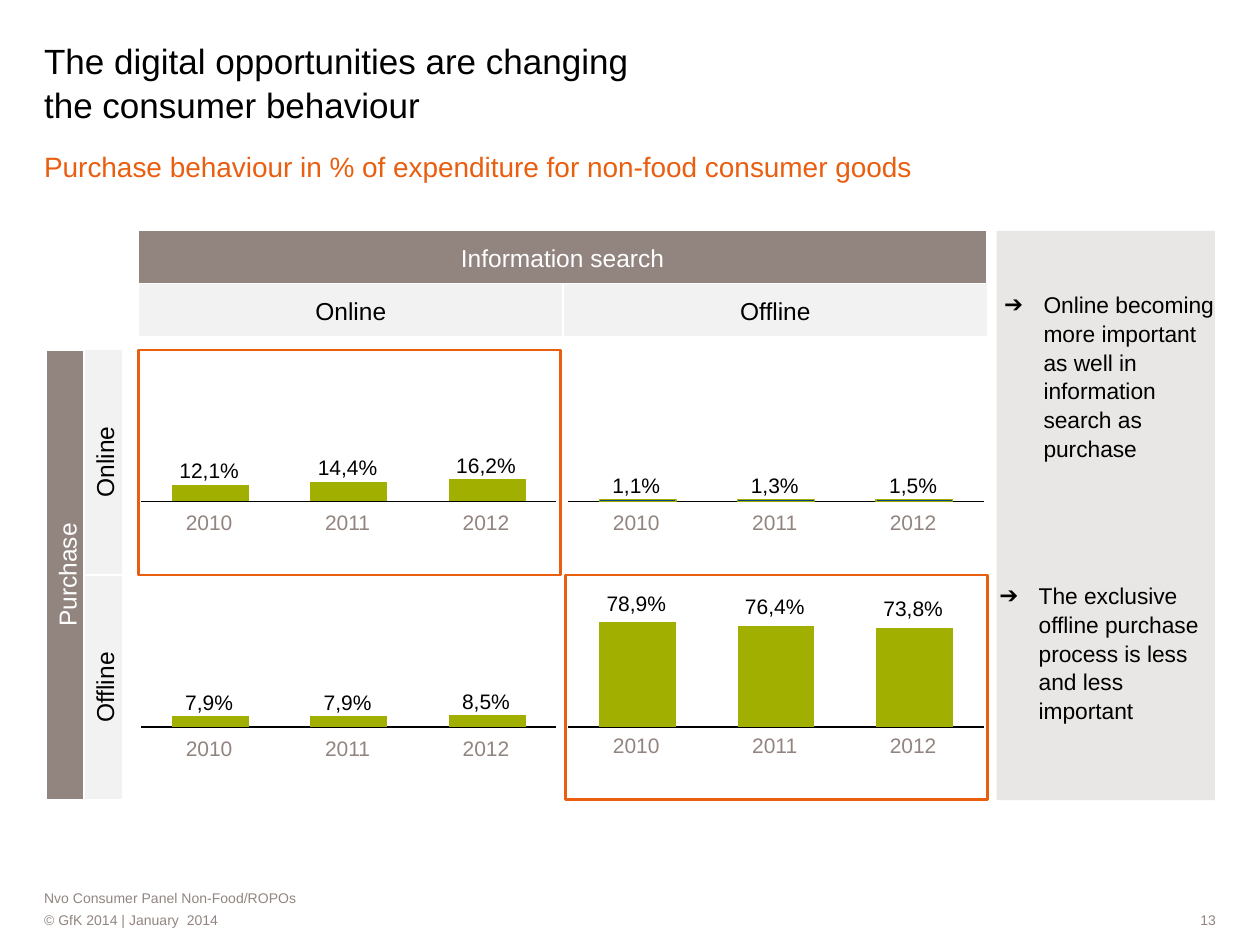
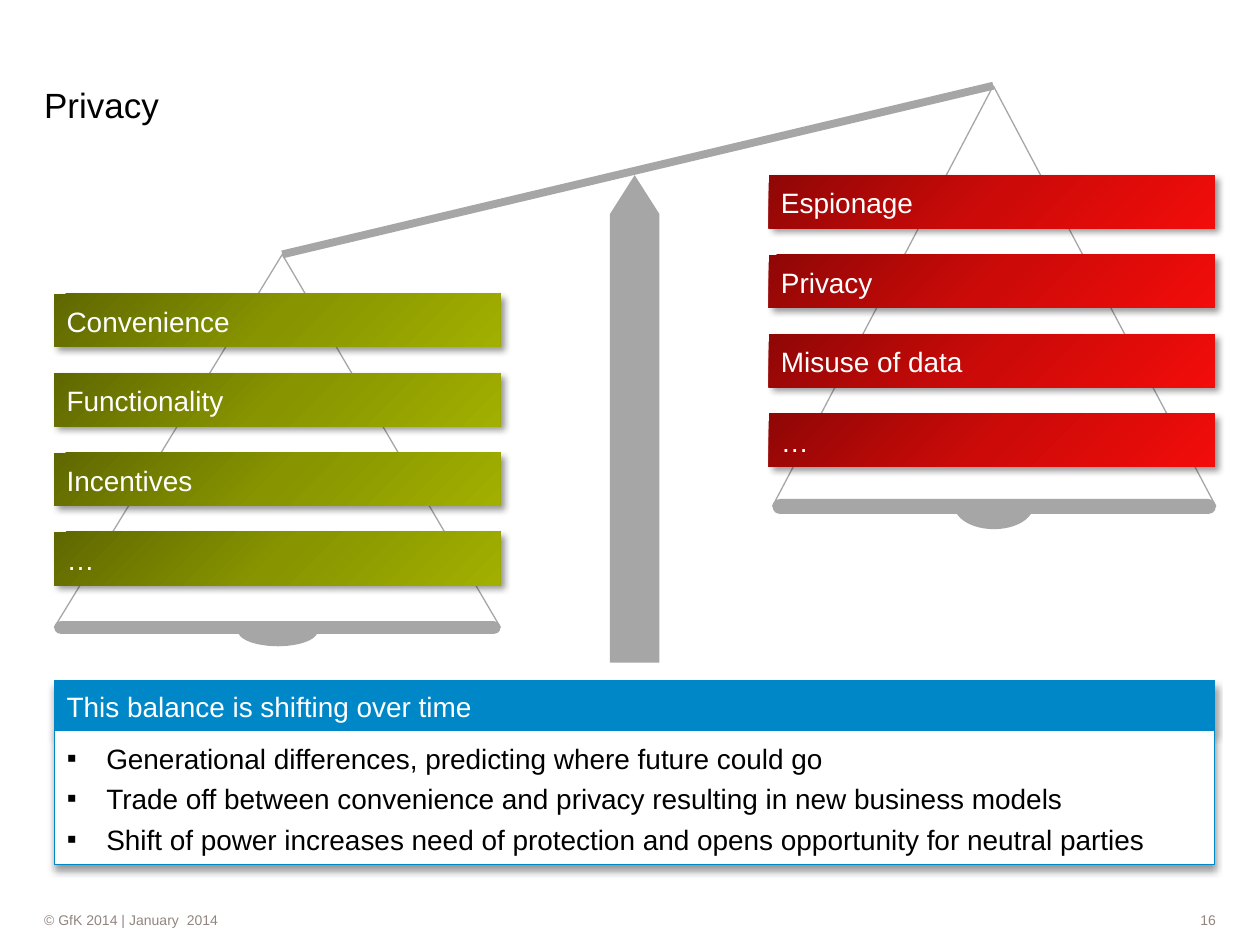
from copy import deepcopy
from math import cos, pi, sin

from pptx import Presentation
from pptx.chart.data import CategoryChartData
from pptx.dml.color import RGBColor as RGB
from pptx.enum.chart import XL_CHART_TYPE as ChartType, XL_TICK_LABEL_POSITION as TickLabels
from pptx.enum.chart import XL_TICK_MARK as TickMark
from pptx.enum.shapes import MSO_CONNECTOR as Connector, MSO_SHAPE as Preset
from pptx.enum.text import MSO_ANCHOR as Anchor, MSO_AUTO_SIZE as AutoSize, PP_ALIGN as Align
from pptx.oxml import parse_xml
from pptx.oxml.ns import nsdecls, qn
from pptx.util import Pt

COLORS = {
    "black": "000000", "white": "FFFFFF", "taupe": "928580", "panel": "E9E7E6",
    "light": "F2F2F2", "orange": "E95E0F", "green": "A1AF00", "navy": "004186",
    "blue": "0087C8", "gray": "A6A6A6",
}
COLORS = {name: RGB.from_string(value) for name, value in COLORS.items()}
GRADIENTS = {
    "benefits": ["5F6800", "889400", "A1AF00"],
    "risks": ["8F0706", "CC0A08", "F20C0A"],
}
FRAME = {
    "word_wrap": True, "auto_size": AutoSize.NONE, "vertical_anchor": Anchor.MIDDLE,
    "margin_left": 0, "margin_top": 0, "margin_right": 0, "margin_bottom": 0,
}
PADDED = {
    "margin_left": Pt(7.2), "margin_top": Pt(3.6),
    "margin_right": Pt(7.2), "margin_bottom": Pt(3.6),
}


def write(shape, lines, size, color, bullet=None, align=Align.LEFT, **frame_format):
    """Fill a shape with one paragraph per line, all in one style."""
    frame = shape.text_frame
    for name, value in (FRAME | frame_format).items():
        setattr(frame, name, value)
    for index, line in enumerate(lines):
        paragraph = frame.paragraphs[0] if index == 0 else frame.add_paragraph()
        paragraph.text = line
        if bullet:
            props = paragraph._p.get_or_add_pPr()
            props.set("marL", str(Pt(22.5)))
            props.set("indent", str(-Pt(22.5)))
            props.append(parse_xml(f'<a:buFont {nsdecls("a")} typeface="Arial"/>'))
            props.append(parse_xml(f'<a:buChar {nsdecls("a")} char="{bullet}"/>'))
        spacing = {"alignment": align, "line_spacing": 1.05,
                   "space_before": Pt(3 if index else 0), "space_after": Pt(0)}
        for name, value in spacing.items():
            setattr(paragraph, name, value)
        for run in paragraph.runs:
            for name, value in {"name": "Arial", "size": Pt(size), "bold": False}.items():
                setattr(run.font, name, value)
            run.font.color.rgb = COLORS[color]
        for line_break in paragraph._p.findall(qn("a:br")):
            line_break.insert(0, deepcopy(paragraph.runs[0]._r.rPr))


def dress(shape, fill=None, line=None, weight=0.75, shadow_angle=None):
    """Set fill, outline and shadow of a shape."""
    shape.shadow.inherit = False
    if fill in GRADIENTS:
        shape.fill.gradient()
        shape.fill.gradient_angle = 315
        stops = shape._element.spPr.find(qn("a:gradFill")).find(qn("a:gsLst"))
        stops.insert(1, deepcopy(stops[0]))
        for stop, position, value in zip(shape.fill.gradient_stops, (0, 0.5, 1), GRADIENTS[fill]):
            stop.position = position
            stop.color.rgb = RGB.from_string(value)
    elif fill:
        shape.fill.solid()
        shape.fill.fore_color.rgb = COLORS[fill]
    else:
        shape.fill.background()
    if line:
        shape.line.color.rgb = COLORS[line]
        shape.line.width = Pt(weight)
    else:
        shape.line.fill.background()
    if shadow_angle is not None:
        shape._element.spPr.find(qn("a:effectLst")).append(parse_xml(
            f'<a:outerShdw {nsdecls("a")} blurRad="{Pt(4)}" dist="{Pt(3)}" '
            f'dir="{shadow_angle * 60000}" algn="tl" rotWithShape="0">'
            '<a:srgbClr val="000000"><a:alpha val="40000"/></a:srgbClr></a:outerShdw>'))
    return shape


prs = Presentation()
prs.slide_width, prs.slide_height = Pt(720), Pt(540)
behaviour = prs.slides.add_slide(prs.slide_layouts[3])
privacy = prs.slides.add_slide(prs.slide_layouts[1])

# Title and footer of both slides
for slide, title, number in [
    (behaviour, "The digital opportunities are changing\vthe consumer behaviour", "13"),
    (privacy, "Privacy", "16"),
]:
    heading = slide.shapes.title
    heading.left, heading.top, heading.width, heading.height = map(Pt, (25.2, 21, 499, 51))
    write(heading, [title], 20, "black", vertical_anchor=Anchor.BOTTOM)
    for left, width, text, align in [
        (25.2, 556, "© GfK 2014 | January  2014", Align.LEFT),
        (592.6, 102.2, number, Align.RIGHT),
    ]:
        footer = slide.shapes.add_textbox(Pt(left), Pt(519.8), Pt(width), Pt(11.5))
        write(footer, [text], 8, "taupe", align=align)

# Slide 13: subtitle and source
for top, height, text, size, color in [
    (82.8, 23, "Purchase behaviour in % of expenditure for non-food consumer goods", 16, "orange"),
    (507, 11.5, "Nvo Consumer Panel Non-Food/ROPOs", 8, "taupe"),
]:
    caption = behaviour.shapes.add_textbox(Pt(25.2), Pt(top), Pt(669), Pt(height))
    write(caption, [text], size, color)

# Conclusions on the gray panel, which lies behind the placeholders
panel = behaviour.shapes.add_shape(Preset.RECTANGLE, Pt(569.6), Pt(131.9), Pt(124.6), Pt(325.3))
dress(panel, "panel")
behaviour.shapes._spTree.insert(2, panel._element)
for index, left, top, conclusion in [
    (1, 566.6, 162, "Online becoming more important as well in information search as purchase"),
    (2, 563.8, 328.3, "The exclusive offline purchase process is less and less important"),
]:
    point = behaviour.placeholders[index]
    point.left, point.top, point.width, point.height = map(Pt, (left, top, 134.5, 128))
    write(point, [conclusion], 13, "black", bullet="➔", **PADDED | {"vertical_anchor": Anchor.TOP})

# Charts of the four search and purchase combinations
YEARS = ["2010", "2011", "2012"]
CHART_WIDTH, CHART_HEIGHT, YEAR_STEP = 246.2, 72, 79.1
PLOT = {"x": 0.018, "y": 0.06, "w": 0.964, "h": 0.83}
for left, top, maximum, values, shares, label_gap, year_drop, fill, outline in [
    (76.3, 222.5, 478, (73, 87, 100), ("12,1%", "14,4%", "16,2%"), 1.7, 68.4, "green", None),
    (76.3, 351.4, 915, (92, 92, 100), ("7,9%", "7,9%", "8,5%"), 1.3, 68.4, "green", None),
    (320.4, 351.4, 100, (100, 97, 95), ("78,9%", "76,4%", "73,8%"), 4.4, 67, "green", None),
    (320.4, 222.5, 5096, (73, 87, 100), ("1,1%", "1,3%", "1,5%"), 1.5, 68.4, "navy", "green"),
]:
    data = CategoryChartData()
    data.categories = ["1", "2", "3"]
    data.add_series("Series 1", values)
    chart = behaviour.shapes.add_chart(
        ChartType.COLUMN_STACKED, Pt(left), Pt(top), Pt(CHART_WIDTH), Pt(CHART_HEIGHT), data).chart
    chart.has_legend = chart.has_title = False
    for name, value in {"name": "Cambria", "size": Pt(9), "bold": True}.items():
        setattr(chart.font, name, value)
    chart.font.color.rgb = COLORS["black"]
    for axis in (chart.category_axis, chart.value_axis):
        for name, value in {"tick_label_position": TickLabels.NONE, "has_major_gridlines": False,
                            "major_tick_mark": TickMark.NONE,
                            "minor_tick_mark": TickMark.NONE}.items():
            setattr(axis, name, value)
    chart.category_axis.format.line.color.rgb = COLORS["black"]
    chart.category_axis.format.line.width = Pt(0.75)
    chart.value_axis.format.line.fill.background()
    chart.value_axis.minimum_scale, chart.value_axis.maximum_scale = 0, maximum
    columns = chart.plots[0]
    columns.gap_width, columns.overlap, columns.vary_by_categories = 80, 100, False
    bars = columns.series[0].format
    bars.fill.solid()
    bars.fill.fore_color.rgb = COLORS[fill]
    if outline:
        bars.line.color.rgb = COLORS[outline]
        bars.line.width = Pt(0.75)
    plot_area = chart._chartSpace.chart.plotArea
    for default_layout in plot_area.findall(qn("c:layout")):
        plot_area.remove(default_layout)
    edges = "".join(f'<c:{side}Mode val="edge"/>' for side in "xy")
    edges += "".join(f'<c:{side} val="{share}"/>' for side, share in PLOT.items())
    plot_area.insert(0, parse_xml(
        f'<c:layout {nsdecls("c")}><c:manualLayout><c:layoutTarget val="inner"/>'
        f'{edges}</c:manualLayout></c:layout>'))

    # Shares sit above the bars, years below the axis
    baseline = top + (PLOT["y"] + PLOT["h"]) * CHART_HEIGHT
    for index, (year, value, share) in enumerate(zip(YEARS, values, shares)):
        label_left = left + 23.2 + index * YEAR_STEP
        bar_top = baseline - PLOT["h"] * CHART_HEIGHT * value / maximum
        for label_top, text, color in [(bar_top - label_gap - 14.4, share, "black"),
                                       (top + year_drop, year, "taupe")]:
            label = behaviour.shapes.add_textbox(Pt(label_left), Pt(label_top), Pt(40), Pt(14.4))
            write(label, [text], 12, color, align=Align.CENTER)

# Matrix headers: centre, length, thickness, rotation
for center_x, center_y, length, thickness, rotation, text, fill, color in [
    (321.5, 147, 484.6, 30.2, 0, "Information search", "taupe", "white"),
    (200.5, 177.2, 242.6, 30.2, 0, "Online", "light", "black"),
    (443.1, 177.2, 242.6, 30.2, 0, "Offline", "light", "black"),
    (37.8, 328.6, 257, 22.3, 270, "Purchase", "taupe", "white"),
    (59.2, 264, 128.5, 22.3, 270, "Online", "light", "black"),
    (59.2, 392.8, 128.5, 22.3, 270, "Offline", "light", "black"),
]:
    header = behaviour.shapes.add_shape(
        Preset.RECTANGLE, Pt(center_x - length / 2), Pt(center_y - thickness / 2),
        Pt(length), Pt(thickness))
    header.rotation = rotation
    dress(header, fill, "white")
    write(header, [text], 14, color, align=Align.CENTER, **PADDED)

# Highlighted combinations
for left, top in [(79.2, 200), (323.2, 328.5)]:
    highlight = behaviour.shapes.add_shape(
        Preset.RECTANGLE, Pt(left), Pt(top), Pt(241.2), Pt(128.5))
    dress(highlight, line="orange", weight=1.5)

# Slide 16: the two sides of the scales
SIDES = [
    {"apex": (161.3, 145.4), "pan": (31, 355, 255, 7.2), "bowl": (158.8, 360.7, 8.6),
     "plates": (31, 167.8), "fill": "benefits",
     "topics": ["Convenience", "Functionality", "Incentives", "…"]},
    {"apex": (567.6, 49), "pan": (441.4, 285.1, 253.4, 8.6), "bowl": (568, 288.7, 13.7),
     "plates": (439.2, 100.1), "fill": "risks",
     "topics": ["Espionage", "Privacy", "Misuse of data", "…"]},
]

# Strings and beam
ropes = [(SIDES[0]["apex"], SIDES[1]["apex"], 4.5)]
for side in SIDES:
    pan_left, pan_top, pan_width, pan_height = side["pan"]
    ropes += [(side["apex"], (end, pan_top + pan_height / 2), 0.75)
              for end in (pan_left, pan_left + pan_width)]
for start, end, weight in ropes:
    rope = privacy.shapes.add_connector(Connector.STRAIGHT, *map(Pt, start + end))
    rope.line.color.rgb = COLORS["gray"]
    rope.line.width = Pt(weight)
    rope._element.spPr.append(parse_xml(f'<a:effectLst {nsdecls("a")}/>'))

# Plates, bowls and pans
for side in SIDES:
    left, first_top = side["plates"]
    for index, topic in enumerate(side["topics"]):
        plate = privacy.shapes.add_shape(
            Preset.RECTANGLE, Pt(left), Pt(first_top + index * 45.4), Pt(255), Pt(30.4))
        dress(plate, side["fill"], shadow_angle=45)
        write(plate, [topic], 16, "white", **PADDED)
    center, rim, depth = side["bowl"]
    curve = [(Pt(center + 22.7 * cos(step * pi / 24)), Pt(rim + depth * sin(step * pi / 24)))
             for step in range(25)]
    bowl = privacy.shapes.build_freeform(*curve[0], scale=1.0)
    bowl.add_line_segments(curve[1:], close=True)
    dress(bowl.convert_to_shape(), "gray")
    pan = privacy.shapes.add_shape(Preset.ROUNDED_RECTANGLE, *map(Pt, side["pan"]))
    pan.adjustments[0] = 0.5
    dress(pan, "gray")

# Post
for preset, top, height in [(Preset.ISOSCELES_TRIANGLE, 100.1, 22.3),
                            (Preset.RECTANGLE, 122.4, 256.3)]:
    dress(privacy.shapes.add_shape(preset, Pt(348.5), Pt(top), Pt(28.4), Pt(height)), "gray")

# Conclusion, with the list in front of its heading
conclusion = privacy.shapes.add_shape(Preset.RECTANGLE, Pt(31), Pt(389), Pt(663.2), Pt(28.4))
dress(conclusion, "blue", "blue", shadow_angle=90)
write(conclusion, ["This balance is shifting over time"], 16, "white", **PADDED)
shifts = privacy.placeholders[1]
shifts.left, shifts.top, shifts.width, shifts.height = map(Pt, (31, 417.6, 663.2, 76.3))
dress(shifts, "white", "blue", shadow_angle=90)
write(shifts, [
    "Generational differences, predicting where future could go",
    "Trade off between convenience and privacy resulting in new business models",
    "Shift of power increases need of protection and opens opportunity for neutral parties",
], 16, "black", bullet="▪", **PADDED)
privacy.shapes._spTree.append(shifts._element)

prs.save("out.pptx")
